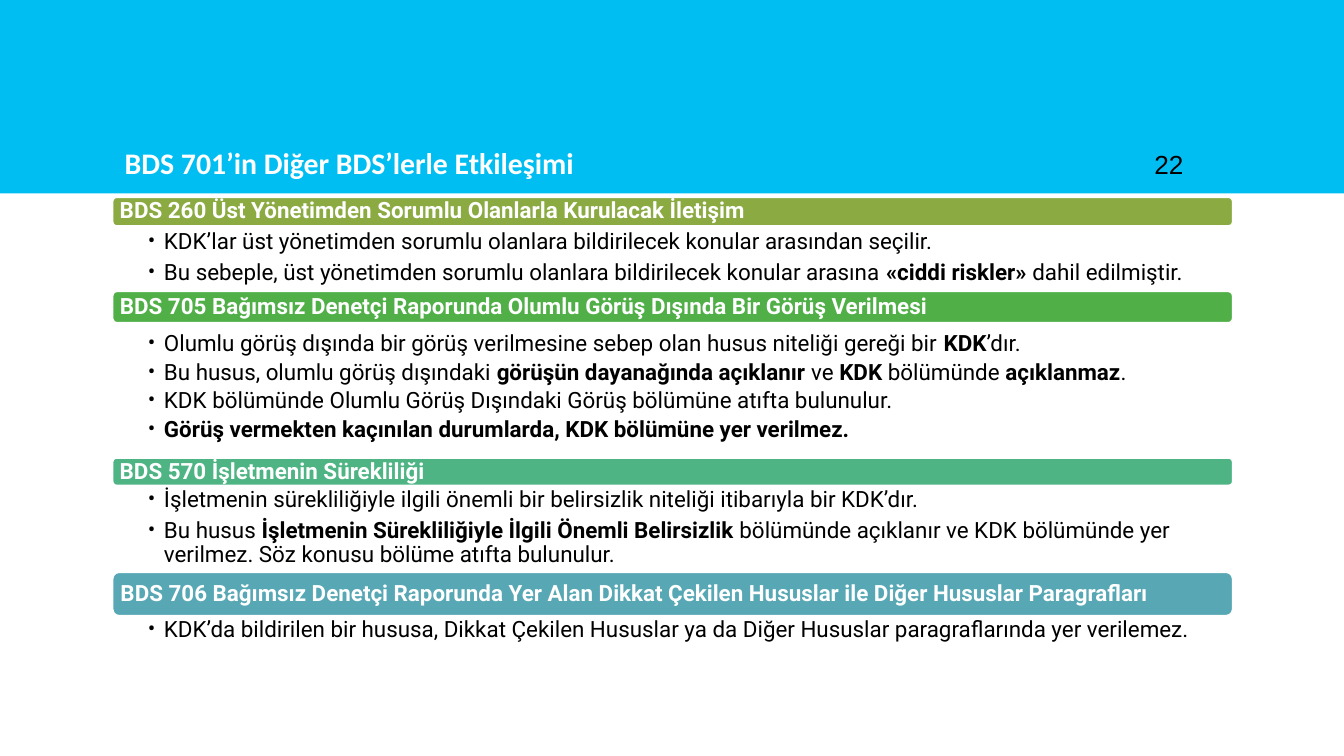
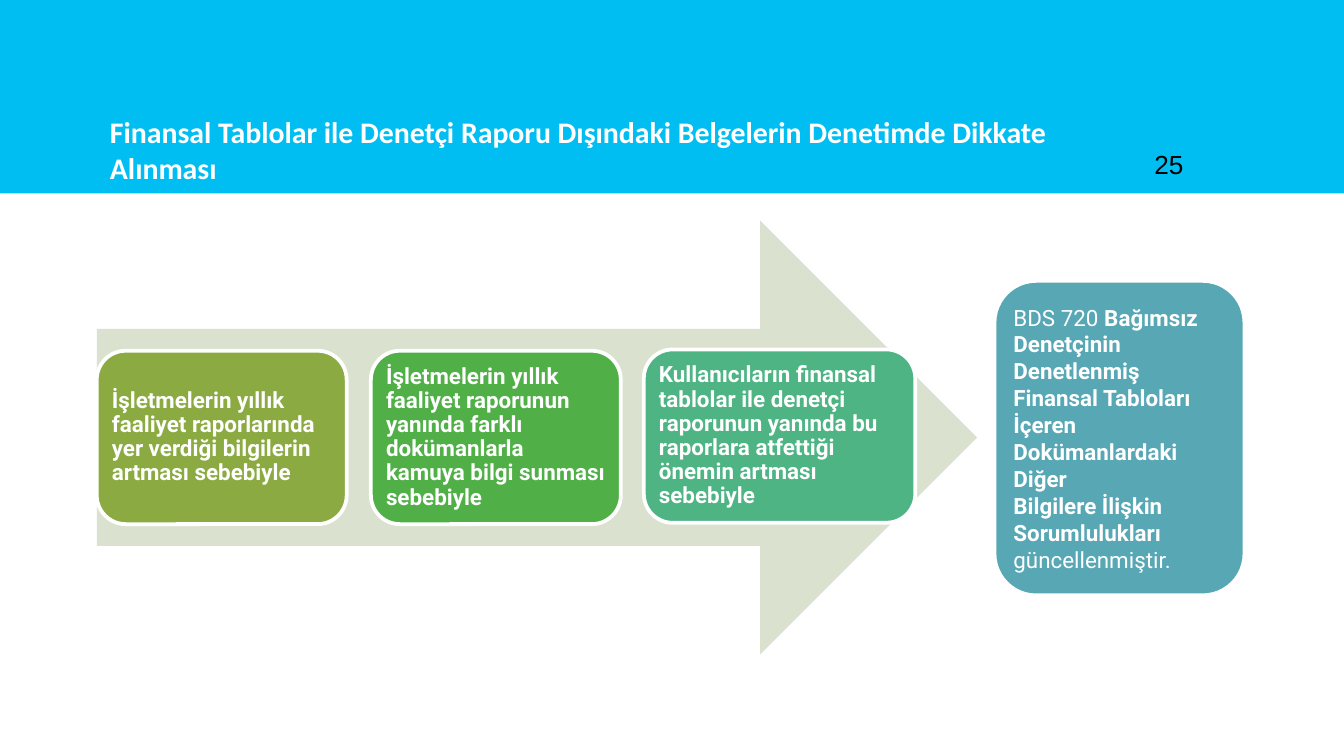
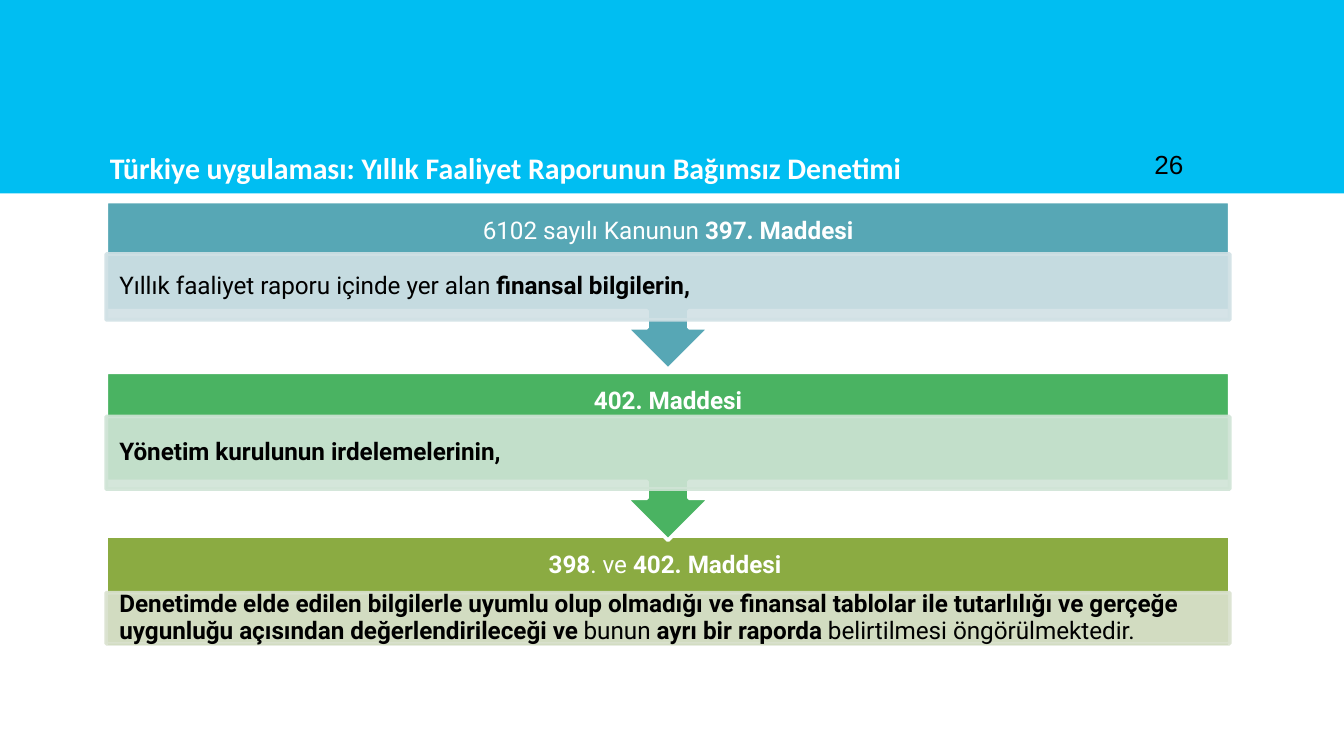
from lxml import etree
from pptx import Presentation
from pptx.dml.color import RGBColor
from pptx.enum.shapes import MSO_SHAPE
from pptx.enum.text import MSO_ANCHOR, PP_ALIGN
from pptx.oxml.ns import qn
from pptx.util import Inches, Pt

RECT = MSO_SHAPE.RECTANGLE
ROUND = MSO_SHAPE.ROUNDED_RECTANGLE
ARROW = MSO_SHAPE.RIGHT_ARROW
CALLOUT = MSO_SHAPE.UP_ARROW_CALLOUT
TOP, MIDDLE, BOTTOM = MSO_ANCHOR.TOP, MSO_ANCHOR.MIDDLE, MSO_ANCHOR.BOTTOM
LEFT, CENTER = PP_ALIGN.LEFT, PP_ALIGN.CENTER

WHITE = RGBColor(0xFF, 0xFF, 0xFF)
BLACK = RGBColor(0x00, 0x00, 0x00)
SKY = RGBColor(0x00, 0xBE, 0xF2)
OLIVE = RGBColor(0x8B, 0xAB, 0x42)
GREEN = RGBColor(0x50, 0xB0, 0x47)
MINT = RGBColor(0x4E, 0xB4, 0x84)
TEAL = RGBColor(0x57, 0xA7, 0xB5)
EMERALD = RGBColor(0x4A, 0xB3, 0x62)
PALE_OLIVE = RGBColor(0xDA, 0xE2, 0xCF)
PALE_GREEN = RGBColor(0xD0, 0xE4, 0xD6)
PALE_TEAL = RGBColor(0xD1, 0xE1, 0xE5)

COLS, ROWS = 100, 56.25
CELL = Inches(10) // COLS
BODY_FONT, TITLE_FONT, NUMBER_FONT = "Roboto", "Calibri", "Arial"

SECTIONS = [
    (14.6, 2.3, OLIVE, "BDS 260 Üst Yönetimden Sorumlu Olanlarla Kurulacak İletişim",
     16.9, 5.1, 4,
     ["KDK’lar üst yönetimden sorumlu olanlara bildirilecek konular arasından seçilir.",
      "Bu sebeple, üst yönetimden sorumlu olanlara bildirilecek konular arasına "
      "**«ciddi riskler» **dahil edilmiştir."]),
    (21.6, 2.5, GREEN,
     "BDS 705 Bağımsız Denetçi Raporunda Olumlu Görüş Dışında Bir Görüş Verilmesi",
     24.5, 9.2, 2.4,
     ["Olumlu görüş dışında bir görüş verilmesine sebep olan husus niteliği gereği bir "
      "**KDK**’dır.",
      "Bu husus, olumlu görüş dışındaki **görüşün dayanağında açıklanır **ve **KDK** "
      "bölümünde **açıklanmaz**.",
      "KDK bölümünde Olumlu Görüş Dışındaki Görüş bölümüne atıfta bulunulur.",
      "**Görüş vermekten kaçınılan durumlarda, KDK bölümüne yer verilmez.**"]),
    (34, 2.2, MINT, "BDS 570 İşletmenin Sürekliliği",
     36.1, 6.7, 4,
     ["İşletmenin sürekliliğiyle ilgili önemli bir belirsizlik niteliği itibarıyla bir KDK’dır.",
      "Bu husus **İşletmenin Sürekliliğiyle İlgili Önemli Belirsizlik **bölümünde açıklanır "
      "ve KDK bölümünde yer verilmez. Söz konusu bölüme atıfta bulunulur."]),
    (42.5, 3.4, TEAL,
     "BDS 706 Bağımsız Denetçi Raporunda Yer Alan Dikkat Çekilen Hususlar ile Diğer "
     "Hususlar Paragrafları",
     45.8, 5.1, 2.4,
     ["KDK’da bildirilen bir hususa, Dikkat Çekilen Hususlar ya da Diğer Hususlar "
      "paragraflarında yer verilemez."]),
]

REASONS = [
    (7.2, 26.1, 18.6, OLIVE,
     "**İşletmelerin yıllık faaliyet raporlarında yer verdiği bilgilerin artması sebebiyle**"),
    (27.6, 26.1, 18.6, GREEN,
     "**İşletmelerin yıllık faaliyet raporunun yanında farklı dokümanlarla kamuya bilgi "
     "sunması sebebiyle**"),
    (47.9, 26, 20.2, MINT,
     "**Kullanıcıların finansal tablolar ile denetçi raporunun yanında bu raporlara "
     "atfettiği önemin artması sebebiyle**"),
]

RESULT = [
    "BDS 720 **Bağımsız Denetçinin Denetlenmiş Finansal Tabloları İçeren "
    "Dokümanlardaki Diğer**",
    "**Bilgilere İlişkin Sorumlulukları**",
    "güncellenmiştir.",
]

ARTICLES = [
    (RECT, 39.9, 8.2, OLIVE, "**398**. ve **402. Maddesi **", 44.1, 3.8, PALE_OLIVE,
     "**Denetimde elde edilen bilgilerle uyumlu olup olmadığı ve finansal tablolar ile "
     "tutarlılığı ve gerçeğe uygunluğu açısından değerlendirileceği ve **bunun "
     "**ayrı bir raporda **belirtilmesi öngörülmektedir."),
    (CALLOUT, 27.7, 12.5, EMERALD, "**402. Maddesi**", 31, 5.4, PALE_GREEN,
     "**Yönetim kurulunun irdelemelerinin,**"),
    (CALLOUT, 15, 12.5, TEAL, "6102 sayılı Kanunun **397. Maddesi**", 18.9, 4.9, PALE_TEAL,
     "Yıllık faaliyet raporu içinde yer alan **finansal bilgilerin,**"),
]


def grid(*cells):
    """Turn grid cells into slide lengths."""
    return [round(c * CELL) for c in cells]


def set_opacity(color_parent, percent):
    """Make the solid fill inside an element partly transparent."""
    color = color_parent.find(qn("a:solidFill"))[0]
    etree.SubElement(color, qn("a:alpha")).set("val", str(percent * 1000))


def add_block(s, kind, box, fill, line=None, opacity=None):
    """Add a flat preset shape with an optional outline."""
    sp = s.shapes.add_shape(kind, *grid(*box))
    sp.shadow.inherit = False
    sp.fill.solid()
    sp.fill.fore_color.rgb = fill
    if line is None:
        sp.line.fill.background()
    else:
        sp.line.color.rgb = line
        sp.line.width = Pt(2)
    if opacity:
        sp_pr = sp._element.spPr
        set_opacity(sp_pr, opacity)
        set_opacity(sp_pr.find(qn("a:ln")), opacity)
    return sp


def add_bullet(p):
    """Give a paragraph a hanging bullet."""
    p.level = 1
    p_pr = p._p.get_or_add_pPr()
    p_pr.set("marL", str(Inches(0.12)))
    p_pr.set("indent", str(-Inches(0.12)))
    etree.SubElement(p_pr, qn("a:buFont")).set("typeface", BODY_FONT)
    etree.SubElement(p_pr, qn("a:buChar")).set("char", "•")


def write(sp, texts, size, color, font=BODY_FONT, anchor=MIDDLE, align=LEFT,
          insets=(0.5, 0.5, 0.5, 0.5), spacing=0.9, after=0, bullets=False):
    """Fill a shape with paragraphs whose bold runs stand between double asterisks."""
    tf = sp.text_frame
    tf.word_wrap = True
    tf.vertical_anchor = anchor
    tf.margin_left, tf.margin_top, tf.margin_right, tf.margin_bottom = grid(*insets)
    for i, text in enumerate(texts):
        p = tf.paragraphs[0] if i == 0 else tf.add_paragraph()
        if bullets:
            add_bullet(p)
        p.alignment = align
        p.line_spacing = spacing
        p.space_after = Pt(after)
        for j, part in enumerate(text.split("**")):
            if part:
                r = p.add_run()
                r.text = part
                r.font.name = font
                r.font.size = Pt(size)
                r.font.bold = j % 2 == 1
                r.font.color.rgb = color


def add_text(s, box, texts, size, color, **style):
    """Add a text box."""
    write(s.shapes.add_textbox(*grid(*box)), texts, size, color, **style)


def add_slide(prs):
    """Add a blank slide with the top band."""
    s = prs.slides.add_slide(prs.slide_layouts[6])
    add_block(s, RECT, (0, 0, COLS, 14.4), SKY)
    return s


def add_heading(s, title, number, left=7.2, top=7.5):
    """Add the title and the slide number on the band."""
    add_text(s, (left, top, 78, 7.3), [f"**{title}**"], 16, WHITE, font=TITLE_FONT,
             anchor=BOTTOM, insets=(1, 0, 1, 1), spacing=1)
    add_text(s, (84.9, 7.1, 6, 7.3), [str(number)], 14, BLACK, font=NUMBER_FONT,
             anchor=BOTTOM, insets=(1, 1, 1, 1), spacing=1)


def add_section(s, top, height, fill, heading, body_top, body_height, after, points):
    """Add a coloured heading bar with its bullet list."""
    left, width = 8.3, 83.5
    bar = add_block(s, ROUND, (left, top, width, height), fill, WHITE)
    write(bar, [f"**{heading}**"], 12, WHITE)
    add_text(s, (left, body_top, width, body_height), points, 12, BLACK, anchor=TOP,
             insets=(2.7, 0.2, 0.9, 0.2), after=after, bullets=True)


def add_card(s, box, fill, texts, spacing=0.9):
    """Add a rounded card with white text."""
    write(add_block(s, ROUND, box, fill, WHITE), texts, 12, WHITE, spacing=spacing)


def add_article(s, kind, top, height, fill, heading, body_top, body_height, tint, body):
    """Add a law article block with its heading and tinted body."""
    left, width = 7.9, 83.6
    block = add_block(s, kind, (left, top, width, height), fill, WHITE)
    if kind == CALLOUT:
        block.rotation = 180
    add_text(s, (left, top, width, 4.4), [heading], 13, WHITE, align=CENTER,
             insets=(1, 1, 1, 1))
    panel = add_block(s, RECT, (left, body_top, width, body_height), tint, tint, 90)
    write(panel, [body], 13, BLACK, insets=(1, 0.2, 1, 0.2))


def build_interaction(prs):
    """Build the slide on related standards."""
    s = add_slide(prs)
    for section in SECTIONS:
        add_section(s, *section)
    add_heading(s, "BDS 701’in Diğer BDS’lerle Etkileşimi", 22, 8.3, 7.1)


def build_reasons(prs):
    """Build the slide with the arrow of reasons and its result."""
    s = add_slide(prs)
    add_block(s, ARROW, (7.2, 16.4, 65.5, 32.3), PALE_OLIVE)
    for left, top, width, fill, text in REASONS:
        add_card(s, (left, top, width, 12.9), fill, [text])
    add_card(s, (74, 20.9, 18.6, 23.4), TEAL, RESULT, spacing=1)
    add_heading(s, "Finansal Tablolar ile Denetçi Raporu Dışındaki Belgelerin Denetimde "
                   "Dikkate Alınması", 25)


def build_articles(prs):
    """Build the slide with the chain of law articles."""
    s = add_slide(prs)
    for article in ARTICLES:
        add_article(s, *article)
    add_heading(s, "Türkiye uygulaması: Yıllık Faaliyet Raporunun Bağımsız Denetimi", 26)


def main():
    """Build and save the presentation."""
    prs = Presentation()
    prs.slide_width, prs.slide_height = grid(COLS, ROWS)
    build_interaction(prs)
    build_reasons(prs)
    build_articles(prs)
    prs.save("out.pptx")


if __name__ == "__main__":
    main()
